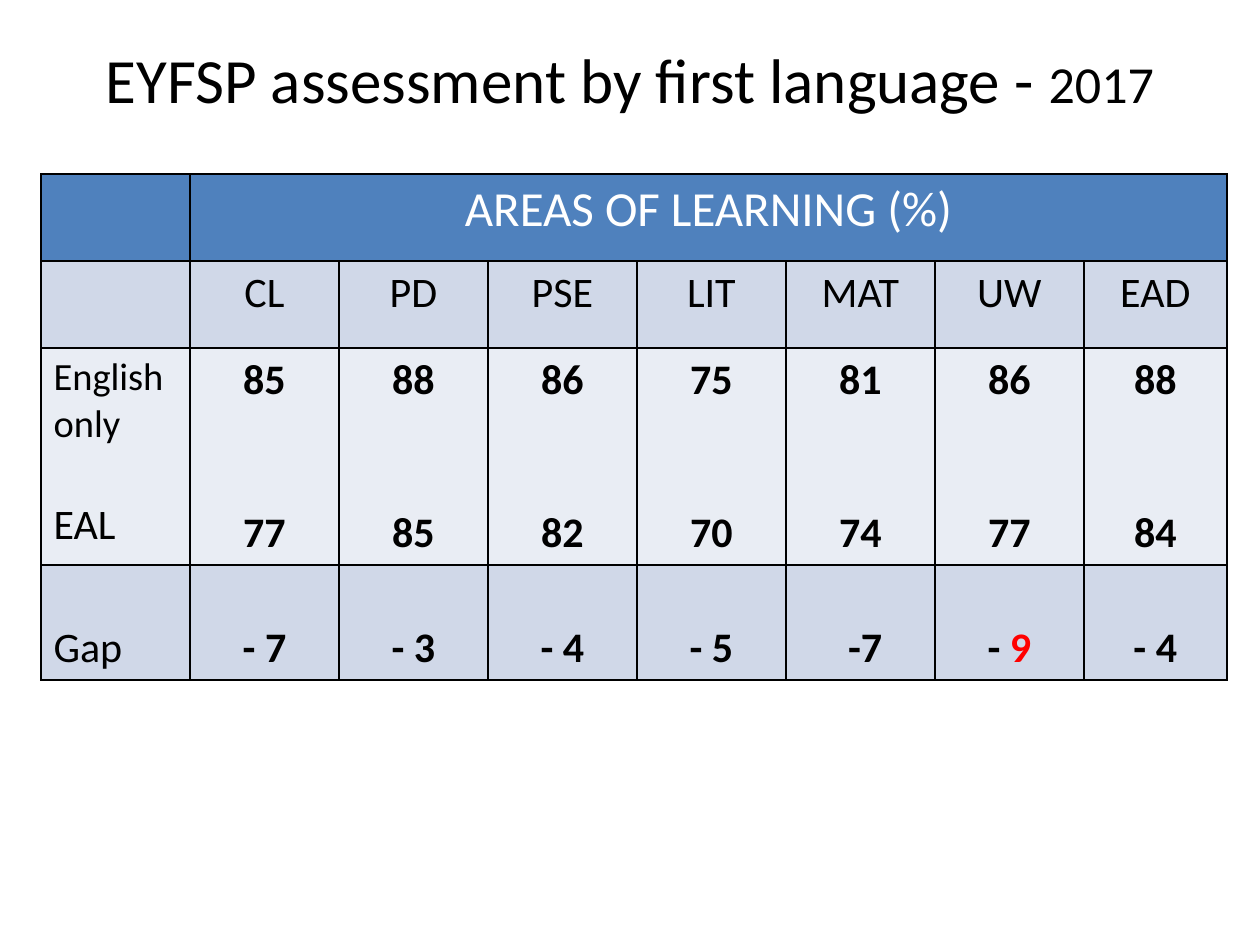
from dataclasses import dataclass

from lxml.etree import SubElement
from pptx import Presentation
from pptx.dml.color import RGBColor
from pptx.enum.text import MSO_ANCHOR, PP_ALIGN
from pptx.oxml.ns import qn
from pptx.util import Emu, Pt

PX_PER_INCH = 126


def px(length):
    return Emu(round(length * 914400 / PX_PER_INCH))


@dataclass(frozen=True)
class Theme:
    font: str = "Calibri"
    black: str = "000000"
    white: str = "FFFFFF"
    red: str = "FF0000"
    header: str = "4F81BD"
    band_dark: str = "D0D8E8"
    band_light: str = "E9EDF4"
    title_size: float = 36
    year_size: float = 29.7
    header_size: float = 28
    body_size: float = 24
    small_size: float = 22
    line: float = 29.3
    border: float = 1


@dataclass(frozen=True)
class Run:
    text: str
    size: float
    color: str = Theme.black
    bold: bool = False


class SlideBuilder:
    def __init__(self, slide, theme):
        self.slide = slide
        self.theme = theme

    def add_lines(self, frame, lines, align=PP_ALIGN.CENTER, gap=0):
        """Add one paragraph per list of runs, with gap points between them."""
        for index, runs in enumerate(lines):
            paragraph = frame.add_paragraph() if index else frame.paragraphs[0]
            paragraph.alignment = align
            if index:
                paragraph.space_before = Pt(gap)
            for item in runs:
                run = paragraph.add_run()
                run.text = item.text
                run.font.name = self.theme.font
                run.font.size = Pt(item.size)
                run.font.bold = item.bold
                run.font.color.rgb = RGBColor.from_string(item.color)

    def text(self, left, top, width, height, runs):
        shape = self.slide.shapes.add_textbox(px(left), px(top), px(width), px(height))
        frame = shape.text_frame
        frame.word_wrap = True
        frame.vertical_anchor = MSO_ANCHOR.MIDDLE
        self.add_lines(frame, [runs])

    def table(self, left, top, columns, rows, fills):
        shape = self.slide.shapes.add_table(
            len(rows), len(columns), px(left), px(top), px(sum(columns)), px(sum(rows)))
        table = shape.table
        for column, width in zip(table.columns, columns):
            column.width = px(width)
        for row, height, fill in zip(table.rows, rows, fills):
            row.height = px(height)
            for cell in row.cells:
                self.border(cell)
                cell.fill.solid()
                cell.fill.fore_color.rgb = RGBColor.from_string(fill)
        return table

    def border(self, cell):
        properties = cell._tc.get_or_add_tcPr()
        for side in ("a:lnL", "a:lnR", "a:lnT", "a:lnB"):
            line = SubElement(properties, qn(side), w=str(Pt(self.theme.border)))
            fill = SubElement(line, qn("a:solidFill"))
            SubElement(fill, qn("a:srgbClr"), val=self.theme.black)

    def cell(self, cell, lines, align=PP_ALIGN.CENTER, gap=0, anchor=MSO_ANCHOR.TOP):
        cell.vertical_anchor = anchor
        self.add_lines(cell.text_frame, lines, align, gap)


AREAS = [
    ("CL", "85", "77", "- 7"),
    ("PD", "88", "85", "- 3"),
    ("PSE", "86", "82", "- 4"),
    ("LIT", "75", "70", "- 5"),
    ("MAT", "81", "74", " -7"),
    ("UW", "86", "77", "- 9"),
    ("EAD", "88", "84", "- 4"),
]
WIDEST_GAP = "- 9"


def main():
    presentation = Presentation()
    presentation.slide_width = px(1260)
    presentation.slide_height = px(945)
    theme = Theme()
    builder = SlideBuilder(
        presentation.slides.add_slide(presentation.slide_layouts[6]), theme)

    builder.text(63, 0, 1134, 157, [
        Run("EYFSP assessment by first language - ", theme.title_size),
        Run("2017", theme.year_size),
    ])

    table = builder.table(
        41, 174, [149] * 7 + [143], [87, 87, 217, 115],
        [theme.header, theme.band_dark, theme.band_light, theme.band_dark])
    table.cell(0, 1).merge(table.cell(0, 7))
    builder.cell(table.cell(0, 1),
                 [[Run("AREAS OF LEARNING (%)", theme.header_size, theme.white)]])

    size = theme.body_size
    builder.cell(table.cell(2, 0),
                 [[Run("English only", theme.small_size)], [Run("EAL", size)]],
                 PP_ALIGN.LEFT, theme.line)
    builder.cell(table.cell(3, 0), [[Run("Gap", size)]],
                 PP_ALIGN.LEFT, anchor=MSO_ANCHOR.BOTTOM)

    for column, (area, english, eal, gap) in enumerate(AREAS, start=1):
        builder.cell(table.cell(1, column), [[Run(area, size)]])
        builder.cell(table.cell(2, column),
                     [[Run(score, size, bold=True)] for score in (english, eal)],
                     gap=2 * theme.line)
        if gap == WIDEST_GAP:
            runs = [Run(gap[:-1], size, bold=True),
                    Run(gap[-1], size, theme.red, True)]
        else:
            runs = [Run(gap, size, bold=True)]
        builder.cell(table.cell(3, column), [runs], anchor=MSO_ANCHOR.BOTTOM)

    presentation.save("out.pptx")


if __name__ == "__main__":
    main()
